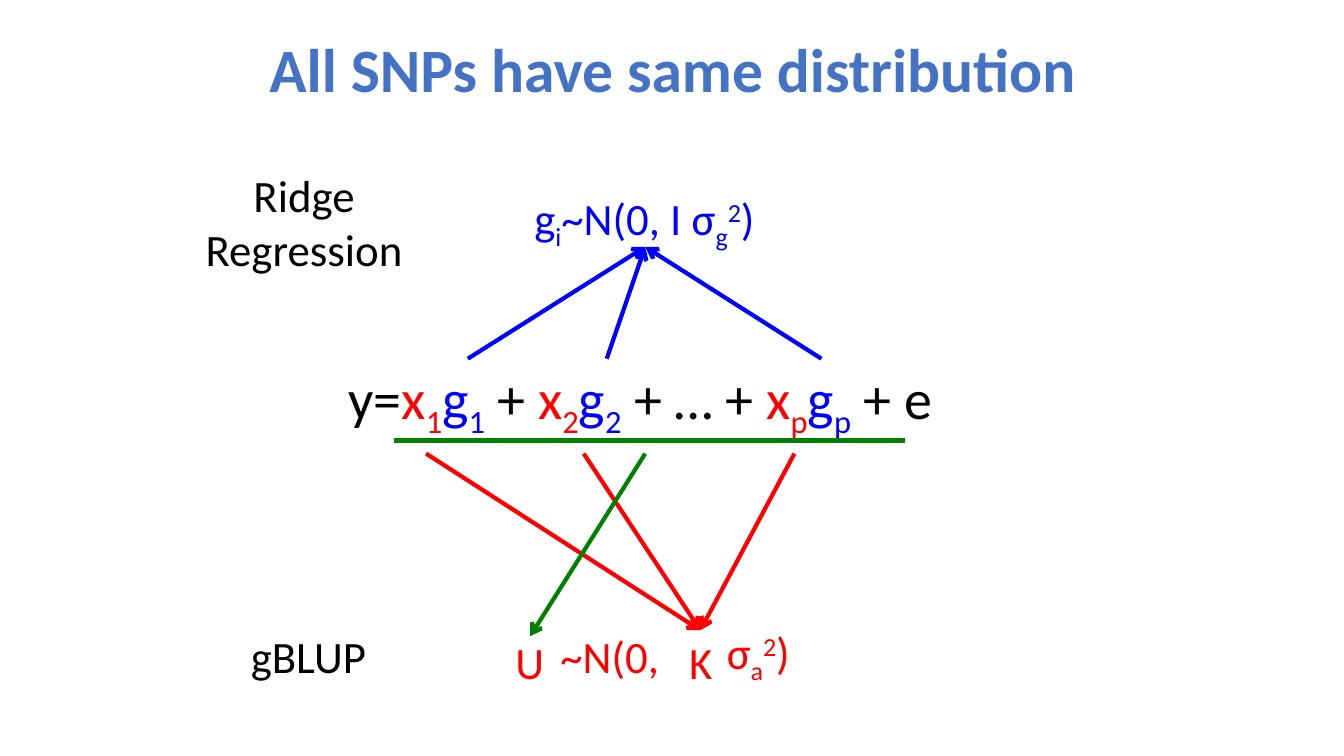
from dataclasses import dataclass

from lxml.etree import SubElement
from pptx import Presentation
from pptx.dml.color import RGBColor
from pptx.enum.shapes import MSO_CONNECTOR as Connector
from pptx.enum.text import MSO_ANCHOR as Anchor, MSO_AUTO_SIZE as AutoSize, PP_ALIGN as Align
from pptx.oxml.ns import qn
from pptx.util import Cm, Pt


@dataclass(frozen=True)
class Theme:
    font: str = "Calibri"
    title_color: str = "4472C4"
    text: str = "000000"
    marker: str = "FF0000"
    effect: str = "0000FF"
    total: str = "008000"
    title_size: int = 44
    equation_size: int = 40
    label_size: int = 32
    line_width: int = 3
    subscript: int = -25
    superscript: int = 30


THEME = Theme()
SUB, SUP = THEME.subscript, THEME.superscript
LABEL_HEIGHT = 1.27


def set_values(target, values):
    for name, value in values.items():
        setattr(target, name, value)


class SlideBuilder:
    def __init__(self, slide, theme):
        self.slide = slide
        self.theme = theme

    def fill_text(self, shape, runs, size, align, anchor, bold=False):
        """Fill a shape with one paragraph of (text, color, baseline percent) runs."""
        frame = shape.text_frame
        set_values(frame, {"word_wrap": True, "auto_size": AutoSize.NONE,
                           "vertical_anchor": anchor})
        paragraph = frame.paragraphs[0]
        paragraph.alignment = align
        for text, color, baseline in runs:
            run = paragraph.add_run()
            run.text = text
            set_values(run.font, {"name": self.theme.font, "size": Pt(size), "bold": bold})
            run.font.color.rgb = RGBColor.from_string(color)
            if baseline:
                run.font._element.set("baseline", str(baseline * 1000))
        return paragraph

    def title(self, text, left, top, width, height):
        shape = self.slide.shapes.title
        set_values(shape, {"left": Cm(left), "top": Cm(top),
                           "width": Cm(width), "height": Cm(height)})
        paragraph = self.fill_text(shape, [(text, self.theme.title_color, 0)],
                                   self.theme.title_size, Align.CENTER, Anchor.MIDDLE,
                                   bold=True)
        paragraph.line_spacing = 0.9

    def text_box(self, left, top, width, height):
        return self.slide.shapes.add_textbox(Cm(left), Cm(top), Cm(width), Cm(height))

    def equation(self, runs, left, top, width, height):
        self.fill_text(self.text_box(left, top, width, height), runs,
                       self.theme.equation_size, Align.LEFT, Anchor.TOP)

    def label(self, runs, left, top, width):
        self.fill_text(self.text_box(left, top, width, LABEL_HEIGHT), runs,
                       self.theme.label_size, Align.CENTER, Anchor.MIDDLE)

    def line(self, start, end, color, arrow=False):
        points = [Cm(value) for value in (*start, *end)]
        connector = self.slide.shapes.add_connector(Connector.STRAIGHT, *points)
        connector.line.width = Pt(self.theme.line_width)
        connector.line.color.rgb = RGBColor.from_string(color)
        properties = connector._element.spPr
        if arrow:
            SubElement(properties.find(qn("a:ln")), qn("a:tailEnd"), type="arrow")
        SubElement(properties, qn("a:effectLst"))


def term(index):
    """Runs for one marker times its effect."""
    return [("x", THEME.marker, 0), (index, THEME.marker, SUB),
            ("g", THEME.effect, 0), (index, THEME.effect, SUB)]


def main():
    presentation = Presentation()
    set_values(presentation, {"slide_width": Cm(33.87), "slide_height": Cm(19.05)})
    slide = presentation.slides.add_slide(presentation.slide_layouts[5])
    builder = SlideBuilder(slide, THEME)
    text, marker, effect, total = THEME.text, THEME.marker, THEME.effect, THEME.total

    builder.title("All SNPs have same distribution", 2.36, 0, 29.21, 3.68)
    builder.equation([("y=", text, 0), *term("1"), (" + ", text, 0), *term("2"),
                      (" + … + ", text, 0), *term("p"), (" + e", text, 0)],
                     8.53, 9.04, 18.8, 1.96)

    for marker_x in (20.02, 14.71, 10.74):
        builder.line((marker_x, 11.43), (17.65, 15.88), marker, arrow=True)
    for effect_x in (11.79, 15.29, 20.7):
        builder.line((effect_x, 9.04), (16.26, 6.22), effect, arrow=True)
    builder.line((9.93, 11.1), (22.81, 11.1), total)
    builder.line((16.26, 11.43), (13.36, 16.03), total, arrow=True)

    builder.label([("g", effect, 0), ("i", effect, SUB), ("~N(0, I σ", effect, 0),
                   ("g", effect, SUB), ("2", effect, SUP), (")", effect, 0)],
                  12.24, 4.95, 8)
    builder.label([("~N(0,", marker, 0)], 13.23, 15.88, 4.27)
    builder.label([("U", marker, 0)], 12.37, 16.03, 1.96)
    builder.label([("K", marker, 0)], 16.76, 16.03, 1.8)
    builder.label([("σ", marker, 0), ("a", marker, SUB), ("2", marker, SUP),
                   (")", marker, 0)], 17.65, 15.88, 2.92)
    builder.label([("Ridge Regression", text, 0)], 4.11, 4.95, 7.11)
    builder.label([("gBLUP", text, 0)], 5.54, 15.88, 4.47)

    presentation.save("out.pptx")


if __name__ == "__main__":
    main()
